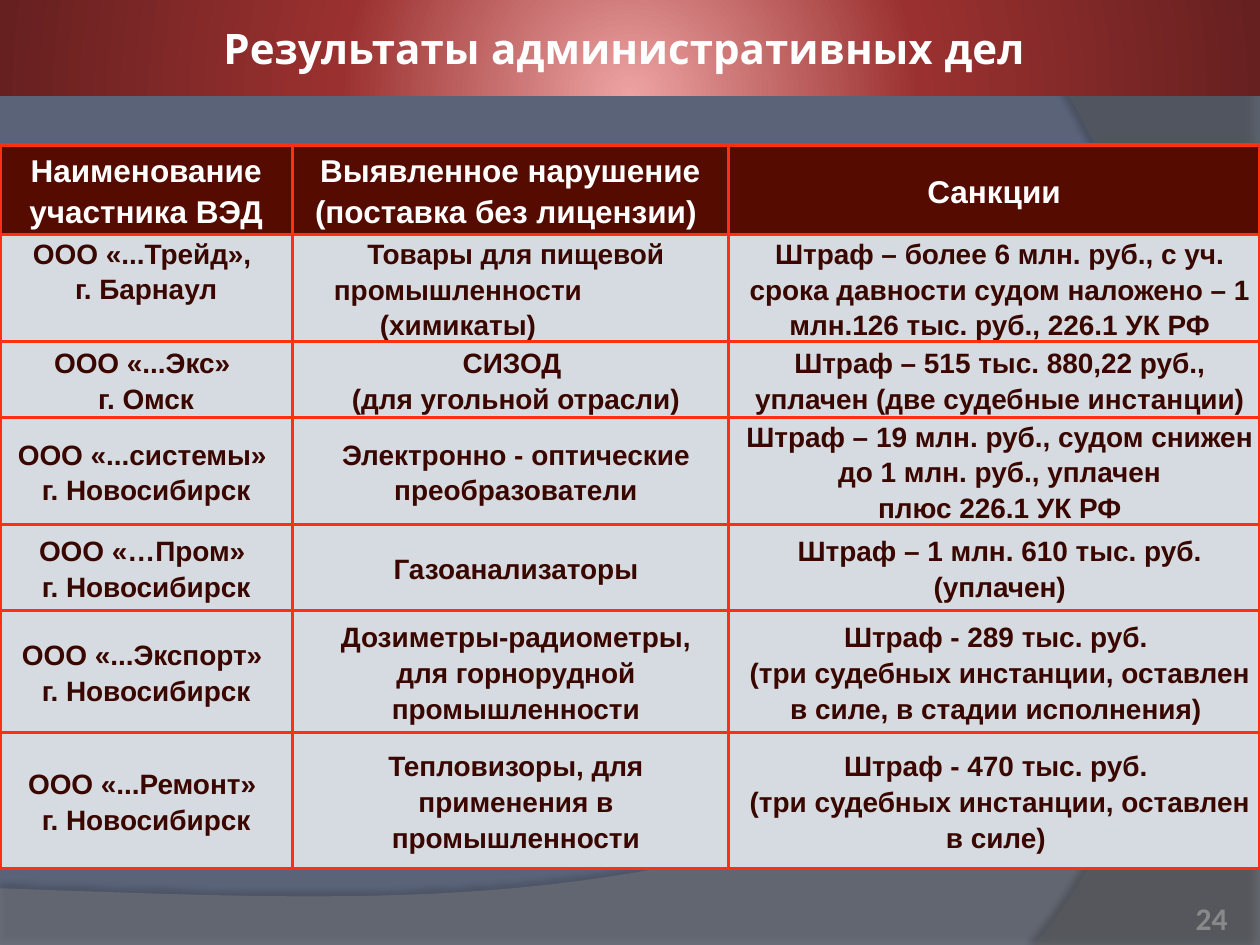
from lxml import etree
from pptx import Presentation
from pptx.dml.color import RGBColor
from pptx.enum.text import MSO_ANCHOR as ANCHOR, PP_ALIGN as ALIGN
from pptx.oxml import parse_xml
from pptx.oxml.ns import nsdecls, qn
from pptx.util import Inches, Pt

WHITE = RGBColor(0xFF, 0xFF, 0xFF)
SLATE = RGBColor(0x5A, 0x63, 0x78)
WAVE_GREY = RGBColor(0x7F, 0x7F, 0x7F)
SIDE_GREY = RGBColor(0x5E, 0x5E, 0x5E)
NUMBER_GREY = RGBColor(0x89, 0x89, 0x89)
HEADER_RED = RGBColor(0x56, 0x0B, 0x00)
CELL_GREY = RGBColor(0xD6, 0xDB, 0xE1)
TEXT_RED = RGBColor(0x3A, 0x07, 0x00)
BORDER_RED = RGBColor(0xFF, 0x2F, 0x12)

HEADER = [
    "Наименование участника ВЭД",
    "Выявленное нарушение (поставка без лицензии) ",
    "Санкции",
]
CASES = [
    ("ООО «...Трейд», \nг. Барнаул",
     "Товары для пищевой\nпромышленности\n(химикаты)",
     "Штраф – более 6 млн. руб., с уч. срока давности судом наложено – 1 млн.126 тыс. руб., 226.1 УК РФ"),
    ("ООО «...Экс» \nг. Омск",
     "СИЗОД \n(для угольной отрасли)",
     "Штраф – 515 тыс. 880,22 руб., уплачен (две судебные инстанции)"),
    ("ООО «...системы» \nг. Новосибирск",
     "Электронно - оптические преобразователи",
     "Штраф – 19 млн. руб., судом снижен до 1 млн. руб., уплачен\nплюс 226.1 УК РФ"),
    ("ООО «…Пром» \nг. Новосибирск",
     "Газоанализаторы",
     "Штраф – 1 млн. 610 тыс. руб. (уплачен)"),
    ("ООО «...Экспорт» \nг. Новосибирск",
     "Дозиметры-радиометры,\nдля горнорудной промышленности",
     "Штраф - 289 тыс. руб. \n(три судебных инстанции, оставлен в силе, в стадии исполнения) "),
    ("ООО «...Ремонт» \nг. Новосибирск",
     "Тепловизоры, для применения в промышленности",
     "Штраф - 470 тыс. руб. \n(три судебных инстанции, оставлен в силе) "),
]
COL_WIDTHS = [2.32, 3.46, 4.22]
ROW_HEIGHTS = [0.71, 0.85, 0.6, 0.85, 0.68, 0.97, 1.08]


def bezier(p0, p1, p2, p3, steps=40):
    """Points along a cubic curve, without its start."""
    pts = []
    for i in range(1, steps + 1):
        t = i / steps
        weights = ((1 - t) ** 3, 3 * t * (1 - t) ** 2, 3 * t * t * (1 - t), t ** 3)
        pts.append(tuple(sum(w * p[axis] for w, p in zip(weights, (p0, p1, p2, p3)))
                         for axis in (0, 1)))
    return pts


def format_text(p, **values):
    for name, value in values.items():
        if name == "color":
            p.font.color.rgb = value
        else:
            setattr(p.font, name, value)


prs = Presentation()
prs.slide_width, prs.slide_height = Inches(10), Inches(7.5)
s = prs.slides.add_slide(prs.slide_layouts[5])
s.background.fill.solid()
s.background.fill.fore_color.rgb = SLATE

# Translucent background waves
wave = [(0, 7.05), (0, 7.51), (10, 7.51), (10, 5.2)]
wave += bezier((10, 5.2), (5.59, 7.29), (3.91, 7.19), (0, 7.05))
side = [(10, 0.02), (10, 7.5), (8.21, 7.5)]
side += bezier((8.21, 7.5), (9.35, 6.19), (10.18, 3), (8, 0))
for pts, color, alpha, shadow_alpha, dist, angle in (
    (wave, WAVE_GREY, 45, 35, 3.5, 270),
    (side, SIDE_GREY, 40, 45, 4, 180),
):
    pts = [(Inches(x), Inches(y)) for x, y in pts]
    fb = s.shapes.build_freeform(*pts[0])
    fb.add_line_segments(pts[1:], close=True)
    sp = fb.convert_to_shape()
    sp.fill.solid()
    sp.fill.fore_color.rgb = color
    sp.line.fill.background()
    clr = sp.fill._xPr.find(qn("a:solidFill"))[0]
    etree.SubElement(clr, qn("a:alpha"), val=str(alpha * 1000))
    sp._element.spPr.append(parse_xml(
        f'<a:effectLst {nsdecls("a")}><a:outerShdw blurRad="{Pt(4)}" dist="{Pt(dist)}"'
        f' dir="{angle * 60000}" algn="ctr" rotWithShape="0"><a:srgbClr val="000000">'
        f'<a:alpha val="{shadow_alpha * 1000}"/></a:srgbClr></a:outerShdw></a:effectLst>'))

# Title band; moved to the front of the waves
title = s.shapes.title
s.shapes._spTree.append(title._element)
title.left, title.top, title.width, title.height = 0, 0, Inches(10), Inches(0.76)
stops = "".join(f'<a:gs pos="{pos * 1000}"><a:srgbClr val="{color}"/></a:gs>'
                for pos, color in ((0, "EDA3A3"), (46, "9A3130"), (100, "672020")))
title._element.spPr.append(parse_xml(
    f'<a:gradFill {nsdecls("a")} rotWithShape="1"><a:gsLst>{stops}</a:gsLst>'
    '<a:path path="circle"><a:fillToRect l="50000" t="100000" r="50000" b="0"/></a:path>'
    '</a:gradFill>'))
tf = title.text_frame
tf.text = "Результаты административных дел "
tf.vertical_anchor = ANCHOR.MIDDLE
p = tf.paragraphs[0]
p.alignment = ALIGN.CENTER
format_text(p, name="Quicksand", size=Pt(24), bold=True, color=WHITE)

# Table of cases
rows = [HEADER, *CASES]
table = s.shapes.add_table(len(rows), len(HEADER), 0, Inches(1.15), Inches(10),
                           Inches(sum(ROW_HEIGHTS))).table
for col, width in zip(table.columns, COL_WIDTHS):
    col.width = Inches(width)
for row, height in zip(table.rows, ROW_HEIGHTS):
    row.height = Inches(height)

for i, texts in enumerate(rows):
    for j, text in enumerate(texts):
        cell = table.cell(i, j)
        cell.text = text
        layout = {
            "margin_left": Inches(0.04), "margin_right": Inches(0.04),
            "margin_top": 0, "margin_bottom": 0,
            "vertical_anchor": ANCHOR.TOP if (i, j) == (1, 0) else ANCHOR.MIDDLE,
        }
        for name, value in layout.items():
            setattr(cell, name, value)
        for edge in ("lnL", "lnR", "lnT", "lnB"):
            cell._tc.get_or_add_tcPr().append(parse_xml(
                f'<a:{edge} {nsdecls("a")} w="{Pt(2.25)}"><a:solidFill>'
                f'<a:srgbClr val="{BORDER_RED}"/></a:solidFill></a:{edge}>'))
        cell.fill.solid()
        cell.fill.fore_color.rgb = CELL_GREY if i else HEADER_RED
        for p in cell.text_frame.paragraphs:
            p.alignment = ALIGN.CENTER
            p.line_spacing = 1.15
            format_text(p, name="Arial", size=Pt(16 if i else 18), bold=True,
                        color=TEXT_RED if i else WHITE)
            if i and j:
                p._p.get_or_add_pPr().set("marL", str(Inches(0.09)))

# The middle line of the first violation sits left of centre
p = table.cell(1, 1).text_frame.paragraphs[1]
p._p.get_or_add_pPr().set("marR", str(Inches(0.92)))

# Slide number
number = s.shapes.add_textbox(Inches(9.25), Inches(7.14), Inches(0.59), Inches(0.29))
tf = number.text_frame
tf.word_wrap = True
tf.vertical_anchor = ANCHOR.MIDDLE
tf.text = "24"
p = tf.paragraphs[0]
p.alignment = ALIGN.RIGHT
format_text(p, name="Calibri", size=Pt(18), bold=True, color=NUMBER_GREY)

prs.save("out.pptx")
